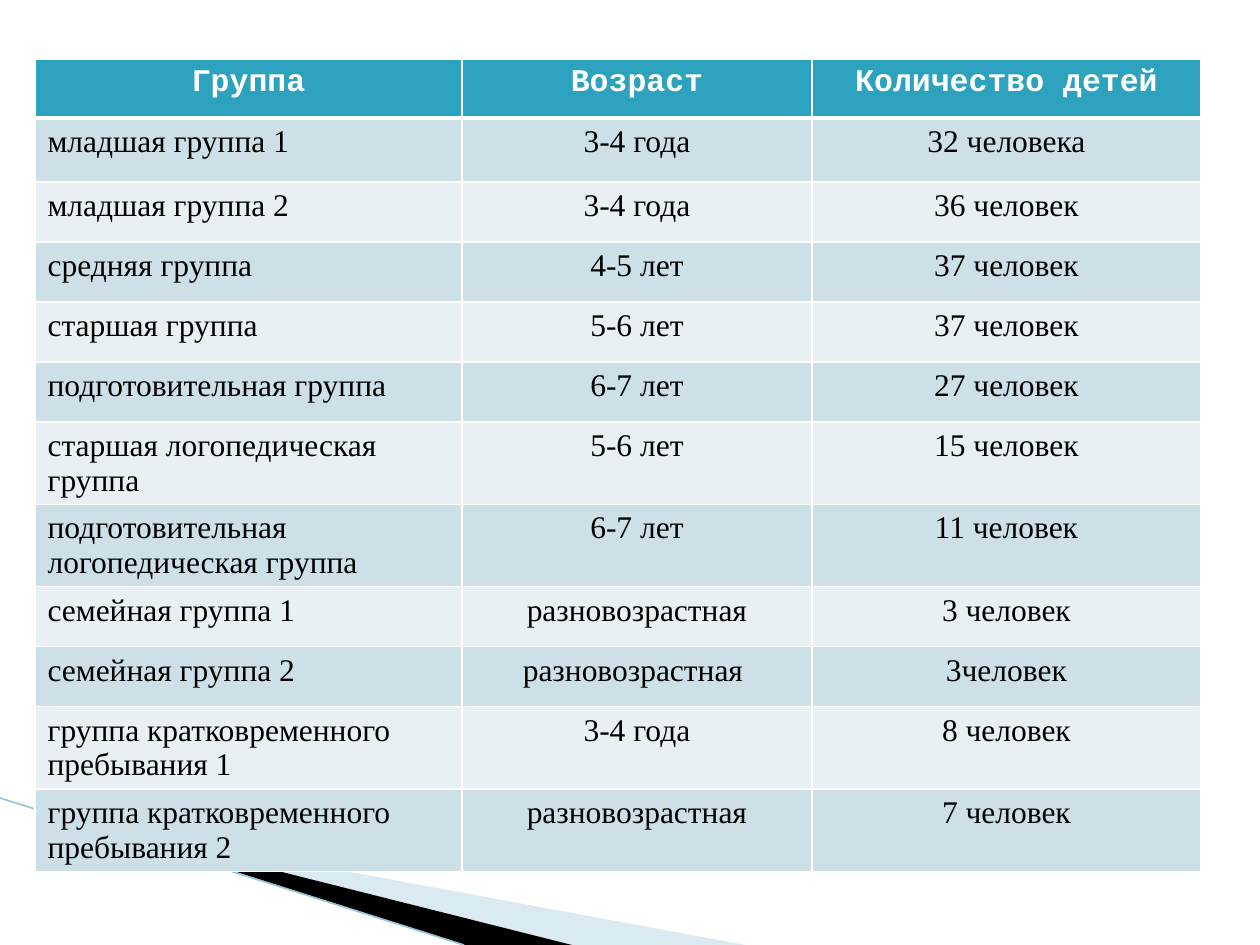
from dataclasses import dataclass

from lxml import etree
from pptx import Presentation
from pptx.dml.color import RGBColor
from pptx.enum.shapes import MSO_CONNECTOR
from pptx.enum.text import PP_ALIGN
from pptx.oxml.ns import qn
from pptx.util import Pt

LINE = MSO_CONNECTOR.STRAIGHT
LEFT, MID = PP_ALIGN.LEFT, PP_ALIGN.CENTER
SCALE = 914400 / 126


@dataclass(frozen=True)
class Theme:
    white: str = "FFFFFF"
    black: str = "000000"
    head: str = "2DA2BF"
    bands: tuple = ("CDE0E8", "E8F0F4")
    wedge: str = "A0CBDC"
    edge: str = "97C5D8"
    head_font: str = "Courier New"
    body_font: str = "Times New Roman"
    size: int = 18


def px(num):
    return round(num * SCALE)


def rgb(code):
    return RGBColor.from_string(code)


class Deck:
    def __init__(self, theme):
        self.theme = theme
        self.file = Presentation()
        self.file.slide_width, self.file.slide_height = px(1260), px(945)
        self.slide = self.file.slides.add_slide(self.file.slide_layouts[6])

    def wedge(self, points, color, alpha=None):
        build = self.slide.shapes.build_freeform(*points[0], scale=SCALE)
        build.add_line_segments(points[1:], close=True)
        shape = build.convert_to_shape()
        shape.shadow.inherit = False
        shape.fill.solid()
        shape.fill.fore_color.rgb = rgb(color)
        shape.line.fill.background()
        if alpha is not None:
            tone = shape.fill._xPr.find(qn("a:solidFill"))[0]
            etree.SubElement(tone, qn("a:alpha"), val=str(alpha * 1000))

    def line(self, start, end, color, width):
        link = self.slide.shapes.add_connector(
            LINE, *map(px, start), *map(px, end))
        link.line.color.rgb = rgb(color)
        link.line.width = Pt(width)
        etree.SubElement(link._element.spPr, qn("a:effectLst"))

    def border(self, cell, side, width):
        props = cell._tc.get_or_add_tcPr()
        edge = etree.SubElement(props, qn("a:ln" + side), w=str(Pt(width)))
        fill = etree.SubElement(edge, qn("a:solidFill"))
        etree.SubElement(fill, qn("a:srgbClr"), val=self.theme.white)

    def cell(self, cell, text, row, col):
        theme, head = self.theme, row == 0
        for side in "LRTB":
            thick = (head and side == "B") or (row == 1 and side == "T")
            self.border(cell, side, 3 if thick else 1)
        cell.fill.solid()
        cell.fill.fore_color.rgb = rgb(
            theme.head if head else theme.bands[(row - 1) % 2])
        cell.text = text
        para = cell.text_frame.paragraphs[0]
        para.alignment = MID if head or col else LEFT
        font = para.font
        font.name = theme.head_font if head else theme.body_font
        font.size = Pt(theme.size)
        font.bold = head
        font.color.rgb = rgb(theme.white if head else theme.black)

    def table(self, left, top, widths, heights, rows):
        grid = self.slide.shapes.add_table(
            len(rows), len(widths), px(left), px(top),
            px(sum(widths)), px(sum(heights))).table
        for col, width in zip(grid.columns, widths):
            col.width = px(width)
        for line, height in zip(grid.rows, heights):
            line.height = px(height)
        for row, texts in enumerate(rows):
            for col, text in enumerate(texts):
                self.cell(grid.cell(row, col), text, row, col)


ROWS = [
    ("Группа", "Возраст", "Количество детей"),
    ("младшая группа 1", "3-4 года", "32 человека"),
    ("младшая группа 2", "3-4 года", "36 человек"),
    ("средняя группа", "4-5 лет", "37 человек"),
    ("старшая группа", "5-6 лет", "37 человек"),
    ("подготовительная группа", "6-7 лет", "27 человек"),
    ("старшая логопедическая группа", "5-6 лет", "15 человек"),
    ("подготовительная логопедическая группа", "6-7 лет", "11 человек"),
    ("семейная группа 1", "разновозрастная", "3 человек"),
    ("семейная группа 2", "разновозрастная ", "3человек"),
    ("группа кратковременного пребывания 1", "3-4 года", "8 человек"),
    ("группа кратковременного пребывания 2", "разновозрастная", "7 человек"),
]


def main():
    theme = Theme()
    deck = Deck(theme)
    deck.wedge([(69, 820), (745, 945), (572, 945)], theme.wedge, 40)
    deck.wedge([(67, 818), (572, 945), (465, 945)], theme.black)
    deck.line((0, 798), (464, 945), theme.edge, 0.95)
    heights = [59, 64] + [60] * (len(ROWS) - 2)
    deck.table(35, 59, [427, 350, 389], heights, ROWS)
    deck.file.save("out.pptx")


if __name__ == "__main__":
    main()
